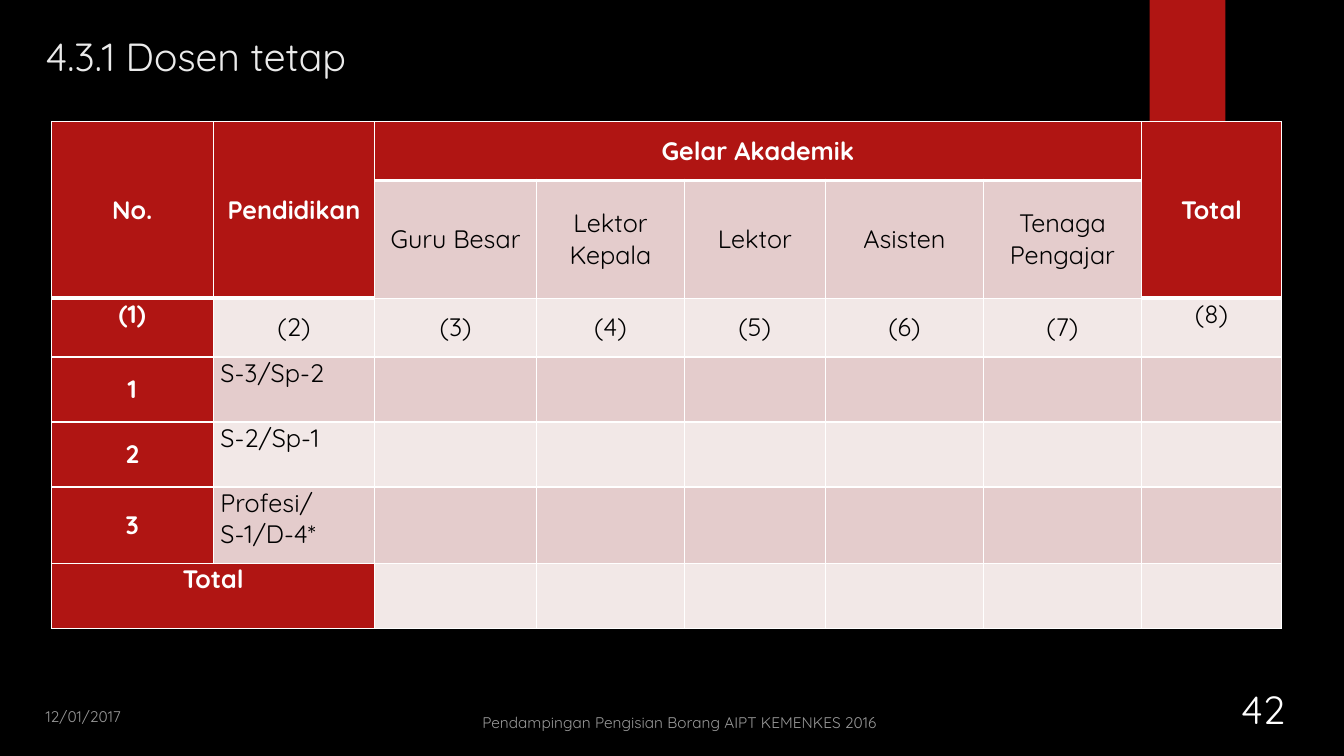
from collections import namedtuple
from dataclasses import dataclass

from lxml.etree import SubElement
from pptx import Presentation
from pptx.dml.color import RGBColor
from pptx.enum.shapes import MSO_SHAPE as Shape
from pptx.enum.text import MSO_ANCHOR as Anchor, PP_ALIGN as Align
from pptx.oxml import parse_xml
from pptx.oxml.ns import nsdecls, qn
from pptx.util import Pt

PX = 9525
Box = namedtuple("Box", "left top width height")


@dataclass(frozen=True)
class Theme:
    """Colours, font and type sizes of the slide."""
    font: str = "Quicksand"
    background: str = "000000"
    accent: str = "B01513"
    glow: str = "50B9C1"
    heading: str = "EBEBEB"
    light: str = "FFFFFF"
    dark: str = "000000"
    bands: tuple = ("F2E8E7", "E4CCCC")
    large: int = 28
    body: int = 18
    small: int = 11


THEME = Theme()
COLUMNS = (154, 154, 154, 141, 134, 151, 150, 134)
ROWS = (56, 112, 56, 62, 62, 73, 62)
CONTENT = (
    ("No.", "Pendidikan", "Gelar Akademik", "", "", "", "", "Total"),
    ("", "", "Guru Besar", "Lektor Kepala", "Lektor", "Asisten", "Tenaga Pengajar", ""),
    tuple(f"({number})" for number in range(1, 9)),
    ("1", "S-3/Sp-2"),
    ("2", "S-2/Sp-1"),
    ("3", "Profesi/\nS-1/D-4*"),
    ("Total",),
)
MERGES = ((0, 0, 1, 0), (0, 1, 1, 1), (0, 2, 0, 6), (0, 7, 1, 7), (6, 0, 6, 1))
TOP_CELLS = {(2, 0), (2, 7), (3, 1), (4, 1), (5, 1), (6, 0)}
TALL_HEADERS = (0, 1, 7)


def emu(box):
    """Turn a box in px into EMU lengths."""
    return [length * PX for length in box]


def write(frame, text, size, color, align=Align.LEFT, bold=False, alpha=None):
    """Fill a text frame with one styled run per line."""
    for index, line in enumerate(text.split("\n")):
        paragraph = frame.add_paragraph() if index else frame.paragraphs[0]
        paragraph.alignment = align
        run = paragraph.add_run()
        run.text = line
        run.font.name, run.font.size, run.font.bold = THEME.font, Pt(size), bold
        run.font.color.rgb = RGBColor.from_string(color)
        if alpha:
            tint = run.font.fill._xPr.find(".//" + qn("a:srgbClr"))
            SubElement(tint, qn("a:alpha"), val=str(alpha * 1000))


def label(slide, box, text, size, color, anchor=Anchor.TOP, **style):
    """Place a wrapped text box."""
    frame = slide.shapes.add_textbox(*emu(box)).text_frame
    frame.word_wrap, frame.vertical_anchor = True, anchor
    write(frame, text, size, color, **style)


def backdrop(slide, box):
    """Paint the background, the faint glow and the red ribbon."""
    slide.background.fill.solid()
    slide.background.fill.fore_color.rgb = RGBColor.from_string(THEME.background)
    glow = slide.shapes.add_shape(
        Shape.OVAL, *emu((box.left + 903, box.top + 176, 296, 296)))
    stops = "".join(
        f'<a:gs pos="{place * 1000}"><a:srgbClr val="{THEME.glow}">'
        f'<a:alpha val="{alpha * 1000}"/></a:srgbClr></a:gs>'
        for place, alpha in ((0, 7), (36, 6), (69, 0)))
    gradient = parse_xml(
        f'<a:gradFill {nsdecls("a")}><a:gsLst>{stops}</a:gsLst><a:path path="circle">'
        '<a:fillToRect l="50000" t="50000" r="50000" b="50000"/></a:path></a:gradFill>')
    glow._element.spPr.find(qn("a:prstGeom")).addnext(gradient)
    ribbon = slide.shapes.add_shape(
        Shape.RECTANGLE, *emu((box.left + 1095, box.top, 72, 120)))
    ribbon.fill.solid()
    ribbon.fill.fore_color.rgb = RGBColor.from_string(THEME.accent)
    for ornament in (glow, ribbon):
        ornament.line.fill.background()
        ornament.shadow.inherit = False


def thick_below(row, column):
    """Tell whether a header rule runs under this cell."""
    return row == 0 or (row == 1 and column in TALL_HEADERS)


def add_borders(cell, row, column):
    """Draw the white rules around a cell."""
    weights = {"L": 1, "R": 1,
               "T": 3 if thick_below(row - 1, column) else 1,
               "B": 3 if thick_below(row, column) else 1}
    properties = cell._tc.get_or_add_tcPr()
    for index, (side, weight) in enumerate(weights.items()):
        properties.insert(index, parse_xml(
            f'<a:ln{side} {nsdecls("a")} w="{Pt(weight)}"><a:solidFill>'
            f'<a:srgbClr val="{THEME.light}"/></a:solidFill></a:ln{side}>'))


def lecturer_table(slide, box):
    """Build the grid of permanent lecturers by degree and rank."""
    grid = slide.shapes.add_table(len(ROWS), len(COLUMNS), *emu(box)).table
    grid.first_row = grid.horz_banding = False
    for column, width in zip(grid.columns, COLUMNS):
        column.width = width * PX
    for row, height in zip(grid.rows, ROWS):
        row.height = height * PX
    for top, left, bottom, right in MERGES:
        grid.cell(top, left).merge(grid.cell(bottom, right))
    for row, texts in enumerate(CONTENT):
        for column in range(len(COLUMNS)):
            cell = grid.cell(row, column)
            header = row == 0 or column == 0
            cell.fill.solid()
            cell.fill.fore_color.rgb = RGBColor.from_string(
                THEME.accent if header else THEME.bands[row % 2])
            add_borders(cell, row, column)
            cell.margin_left = cell.margin_right = 7 * PX
            cell.margin_top = cell.margin_bottom = 0
            top = (row, column) in TOP_CELLS
            cell.vertical_anchor = Anchor.TOP if top else Anchor.MIDDLE
            if column < len(texts) and texts[column]:
                degree = column == 1 and row > 2
                write(cell.text_frame, texts[column], THEME.body,
                      THEME.light if header else THEME.dark,
                      Align.LEFT if degree else Align.CENTER, header)


def footer(slide, box):
    """Place the date, the event name and the page number."""
    left, top = box.left, box.top
    label(slide, Box(left + 1125, top, 88, 81), "42", THEME.large, THEME.light,
          Anchor.BOTTOM, align=Align.CENTER)
    label(slide, Box(left + 416, top + 48, 405, 32),
          "Pendampingan Pengisian Borang AIPT KEMENKES 2016",
          THEME.small, THEME.light, Anchor.BOTTOM, alpha=60)
    label(slide, Box(left, top + 48, 104, 32), "12/01/2017",
          THEME.small, THEME.light, alpha=60)


def main():
    """Assemble and save the slide."""
    deck = Presentation()
    deck.slide_width, deck.slide_height = 1280 * PX, 720 * PX
    slide = deck.slides.add_slide(deck.slide_layouts[6])
    backdrop(slide, Box(0, 0, 1280, 720))
    label(slide, Box(34, 26, 1021, 75), "4.3.1 Dosen tetap", THEME.large, THEME.heading)
    lecturer_table(slide, Box(49, 116, sum(COLUMNS), sum(ROWS)))
    footer(slide, Box(34, 621, 1213, 81))
    deck.save("out.pptx")


if __name__ == "__main__":
    main()
